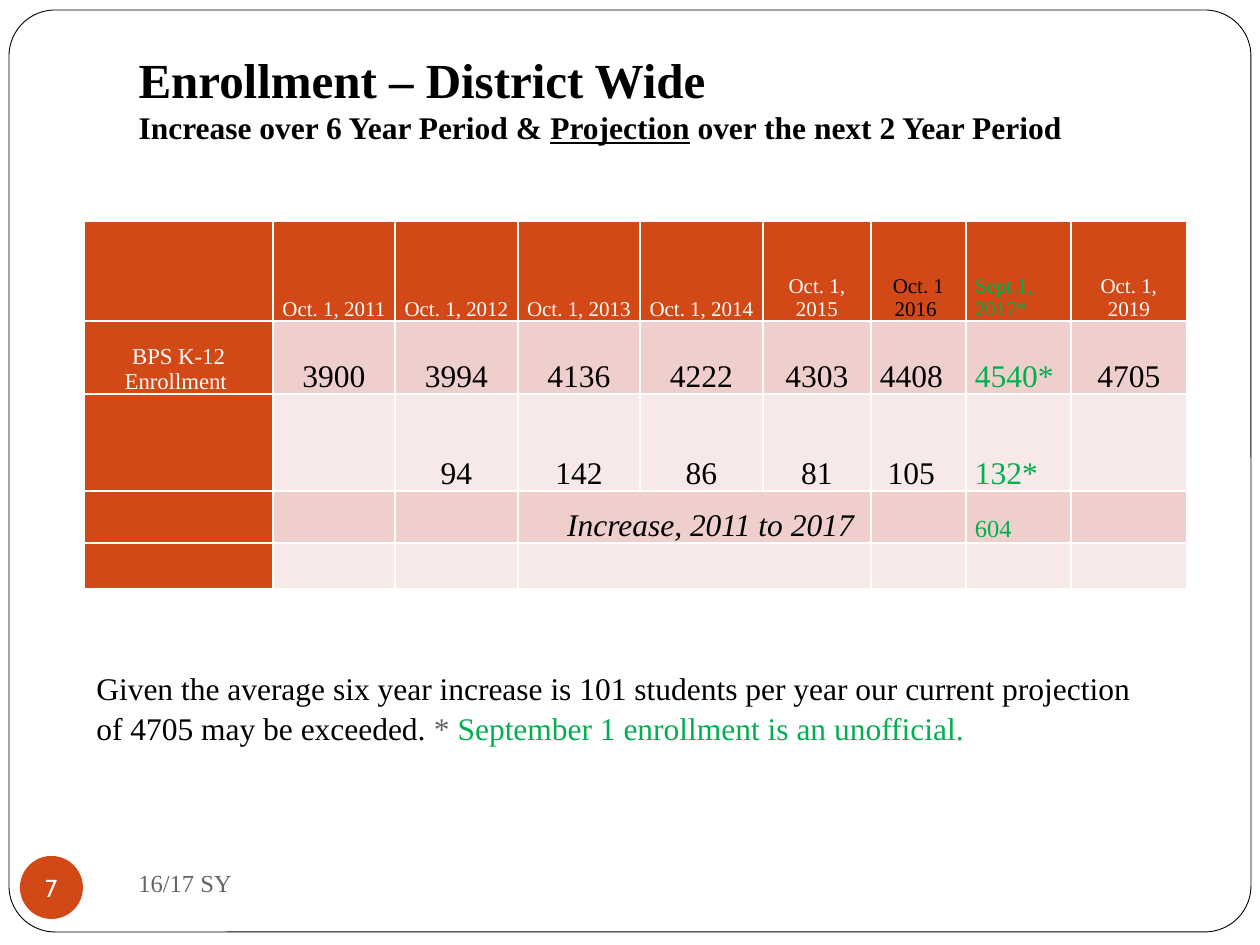
from lxml.etree import SubElement as Sub
from pptx import Presentation
from pptx.dml.color import RGBColor
from pptx.enum.shapes import MSO_SHAPE as Shape
from pptx.enum.text import MSO_ANCHOR as Anchor, MSO_AUTO_SIZE as Auto, PP_ALIGN as Align
from pptx.oxml.ns import qn
from pptx.util import Emu, Pt

SCALE = 914400 / 126
SERIF = "Times New Roman"
BLACK, WHITE, GREY = "000000", "FFFFFF", "696464"
RUST, GREEN = "D34817", "00B050"
BANDS = ["EFCFCC", "F7E9E8"]
COLS = [189, 122, 123, 122, 123, 108, 95, 105, 116]
ROWS = [100, 73, 97, 52, 46]
NOW, SEPT = 6, 7
DATA = [
    ["", "Oct. 1, 2011 ", "Oct. 1, 2012 ", "Oct. 1, 2013 ", "Oct. 1, 2014 ",
     "Oct. 1, 2015", "Oct. 1 2016 ", "Sept 1, 2017*", "Oct. 1, 2019"],
    ["BPS K-12 Enrollment ", "3900", "3994", "4136", "4222", "4303", "4408", "4540*", "4705"],
    ["", "", "94", "142", "86", "81", " 105", "132*", ""],
    ["", "", "", "Increase, 2011 to 2017 ", "", "", "", "604", ""],
    [""] * 9,
]


def px(*nums):
    """Turn pixel lengths into EMU."""
    return [Emu(round(n * SCALE)) for n in nums]


def rgb(code):
    """Turn a hex string into a colour."""
    return RGBColor.from_string(code)


def style(run, size, color, face=SERIF, bold=False):
    """Format one run."""
    font = run.font
    font.size, font.name, font.bold = Pt(size), face, bold
    font.color.rgb = rgb(color)


def add_run(para, text, size, color, bold=False):
    """Append a formatted run to a paragraph."""
    run = para.add_run()
    run.text = text
    style(run, size, color, bold=bold)
    return run


def add_box(slide, box):
    """Add a wrapping text box and return its frame."""
    frame = slide.shapes.add_textbox(*px(*box)).text_frame
    frame.word_wrap = True
    return frame


def add_form(slide, kind, box, fill):
    """Add a flat preset shape without a line."""
    form = slide.shapes.add_shape(kind, *px(*box))
    form.shadow.inherit = False
    form.fill.solid()
    form.fill.fore_color.rgb = rgb(fill)
    form.line.fill.background()
    return form


def add_frame(slide):
    """Place the rounded page border behind everything."""
    form = add_form(slide, Shape.ROUNDED_RECTANGLE, (9, 10, 1242, 922), WHITE)
    form.adjustments[0] = 0.05
    form.line.color.rgb = rgb(BLACK)
    form.line.width = Pt(0.5)
    form._element.getparent().insert(2, form._element)


def add_title(slide):
    """Fill the title placeholder with a heading and a subheading."""
    title = slide.shapes.title
    title.left, title.top, title.width, title.height = px(126, 38, 1071, 157)
    frame = title.text_frame
    frame.auto_size = Auto.NONE
    frame.vertical_anchor = Anchor.BOTTOM
    frame.margin_bottom = px(49)[0]
    para = frame.paragraphs[0]
    para.alignment = Align.LEFT
    add_run(para, "Enrollment – District Wide", 28, BLACK, True)
    para.add_line_break()
    add_run(para, "Increase over 6 Year Period & ", 18, BLACK, True)
    add_run(para, "Projection", 18, BLACK, True).font.underline = True
    add_run(para, " over the next 2 Year Period", 18, BLACK, True)


def edge(cell):
    """Draw thin white borders round a cell."""
    props = cell._tc.get_or_add_tcPr()
    for side in ("lnL", "lnR", "lnT", "lnB"):
        line = Sub(props, qn(f"a:{side}"), w=str(Pt(1)))
        Sub(Sub(line, qn("a:solidFill")), qn("a:srgbClr"), val=WHITE)


def look(row, col):
    """Give the size, colour and alignment of a cell's text."""
    size = 12 if row == 0 else 13 if col == 0 else 14 if (row, col) == (3, SEPT) else 18
    if col == SEPT:
        return size, GREEN, Align.LEFT
    color = WHITE if col == 0 or row == 0 and col != NOW else BLACK
    if row == 3:
        return size, color, Align.RIGHT
    return size, color, Align.LEFT if col == NOW and row else Align.CENTER


def fill_cell(cell, row, col):
    """Set the borders, fill and text of one cell."""
    edge(cell)
    cell.fill.solid()
    cell.fill.fore_color.rgb = rgb(RUST if row == 0 or col == 0 else BANDS[(row - 1) % 2])
    cell.vertical_anchor = Anchor.BOTTOM
    cell.margin_left, cell.margin_right, cell.margin_top, cell.margin_bottom = px(9, 9, 0, 0)
    if not DATA[row][col]:
        return
    size, color, align = look(row, col)
    cell.text_frame.text = DATA[row][col]
    para = cell.text_frame.paragraphs[0]
    para.alignment = align
    style(para.runs[0], size, color)
    para.runs[0].font.italic = row == 3 and col != SEPT


def add_grid(slide):
    """Add the enrollment table."""
    box = px(84, 221, sum(COLS), sum(ROWS))
    table = slide.shapes.add_table(len(ROWS), len(COLS), *box).table
    for col, wide in zip(table.columns, px(*COLS)):
        col.width = wide
    for row, high in zip(table.rows, px(*ROWS)):
        row.height = high
    for row in range(len(ROWS)):
        for col in range(len(COLS)):
            fill_cell(table.cell(row, col), row, col)
    for row in (3, 4):
        table.cell(row, 3).merge(table.cell(row, 5))


def add_note(slide):
    """Add the remark under the table."""
    para = add_box(slide, (84, 661, 1081, 90)).paragraphs[0]
    para.line_spacing = 1.05
    add_run(para, "Given the average six year increase is 101 students per year "
            "our current projection of 4705 may be exceeded. ", 18, BLACK)
    add_run(para, "* ", 18, GREY)
    add_run(para, "September 1 enrollment is an unofficial.", 18, GREEN)


def add_foot(slide):
    """Add the school year and the page number."""
    frame = add_box(slide, (126, 851, 546, 63))
    frame.vertical_anchor = Anchor.MIDDLE
    frame.text = "16/17 SY"
    style(frame.paragraphs[0].runs[0], 14, GREY)
    frame = add_form(slide, Shape.OVAL, (20, 856, 63, 63), RUST).text_frame
    frame.margin_left = frame.margin_right = frame.margin_top = frame.margin_bottom = 0
    frame.word_wrap = False
    frame.vertical_anchor = Anchor.MIDDLE
    frame.text = "7"
    frame.paragraphs[0].alignment = Align.CENTER
    style(frame.paragraphs[0].runs[0], 14, WHITE, "Cabin")


def main():
    """Build and save the slide."""
    deck = Presentation()
    deck.slide_width, deck.slide_height = px(1260, 945)
    slide = deck.slides.add_slide(deck.slide_layouts[5])
    add_frame(slide)
    add_title(slide)
    add_foot(slide)
    add_grid(slide)
    add_note(slide)
    deck.save("out.pptx")


if __name__ == "__main__":
    main()
